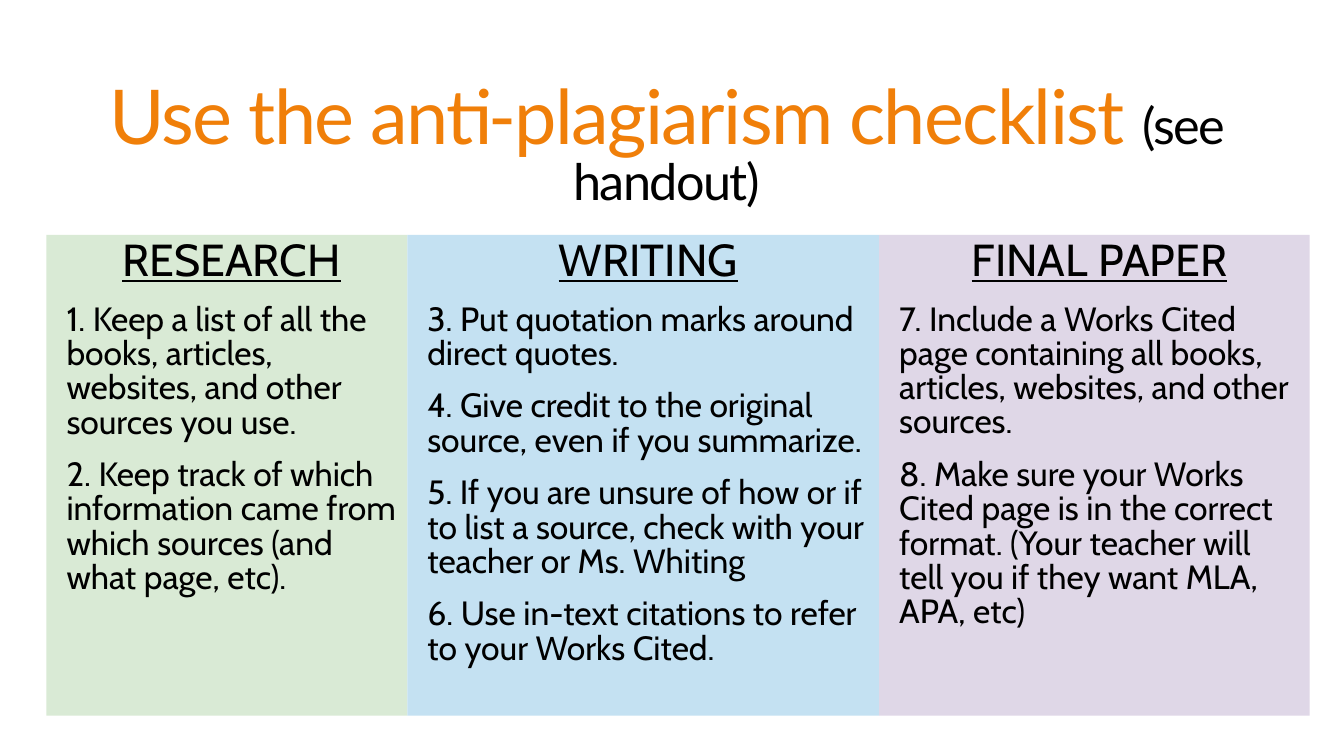
import pptx
import pptx.util
import pptx.dml.color
import pptx.enum.text
import pptx.oxml.ns
from lxml import etree

Inches = pptx.util.Inches
Pt = pptx.util.Pt
Align = pptx.enum.text.PP_ALIGN
Anchor = pptx.enum.text.MSO_ANCHOR

TOP, TALL, LEFT = 2.33, 4.77, 0.46

# width, fill, heading, points
COLS = [
    (3.58, "D9EAD5", "RESEARCH", [
        "1. Keep a list of all the books, articles, websites, and other sources you use.",
        "2. Keep track of which information came from which sources (and what page, etc).",
    ]),
    (4.68, "C4E1F2", "WRITING", [
        "3. Put quotation marks around direct quotes.",
        "4. Give credit to the original source, even if you summarize.",
        "5. If you are unsure of how or if to list a source, check with your teacher or Ms. Whiting",
        "6. Use in-text citations to refer to your Works Cited.",
    ]),
    (4.27, "DFD7E7", "FINAL PAPER", [
        "7. Include a Works Cited page containing all books, articles, websites, and other sources.",
        "8. Make sure your Works Cited page is in the correct format. "
        "(Your teacher will tell you if they want MLA, APA, etc)",
    ]),
]


def color(text):
    return pptx.dml.color.RGBColor.from_string(text)


def place(shape, left, top, width, height):
    shape.left, shape.top = Inches(left), Inches(top)
    shape.width, shape.height = Inches(width), Inches(height)


def style(run, face, size, tint):
    run.font.name = face
    run.font.size = Pt(size)
    run.font.color.rgb = color(tint)


def setup(frame, anchor):
    frame.word_wrap = True
    frame.auto_size = pptx.enum.text.MSO_AUTO_SIZE.NONE
    frame.vertical_anchor = anchor


def indent(para):
    """Inset the whole paragraph and drop its bullet."""
    props = para._p.get_or_add_pPr()
    props.set("marL", str(Inches(0.1)))
    props.set("indent", "0")
    etree.SubElement(props, pptx.oxml.ns.qn("a:buNone"))


def fill_title(shape):
    place(shape, 0.72, 0.55, 11.78, 1.81)
    setup(shape.text_frame, Anchor.MIDDLE)
    para = shape.text_frame.paragraphs[0]
    para.text = "Use the anti-plagiarism checklist "
    para.add_run().text = "(see handout)"
    para.alignment = Align.CENTER
    para.line_spacing = 0.85
    for run, size, tint in zip(para.runs, (54, 36), ("F07F09", "000000")):
        style(run, "Lato", size, tint)
        run.font._element.set("spc", "-120")


def fill_col(shape, tint, head, points):
    shape.fill.solid()
    shape.fill.fore_color.rgb = color(tint)
    frame = shape.text_frame
    setup(frame, Anchor.TOP)
    frame.text = "\n".join([head] + points)
    for i, para in enumerate(frame.paragraphs):
        first = i == 0
        indent(para)
        para.alignment = Align.CENTER if first else Align.LEFT
        para.line_spacing = 0.85
        para.space_before = Pt(0 if first else 13)
        para.space_after = Pt(0)
        run = para.runs[0]
        style(run, "Cabin", 32 if first else 24, "000000")
        run.font.underline = first


def main():
    deck = pptx.Presentation()
    deck.slide_width, deck.slide_height = Inches(13.33), Inches(7.5)
    slide = deck.slides.add_slide(deck.slide_layouts[1])
    fill_title(slide.shapes.title)

    left = LEFT
    for i, (width, tint, head, points) in enumerate(COLS):
        if i == 0:
            shape = slide.placeholders[1]
        else:
            shape = slide.shapes.add_textbox(0, 0, 0, 0)
        place(shape, left, TOP, width, TALL)
        fill_col(shape, tint, head, points)
        left += width
    deck.save("out.pptx")


if __name__ == "__main__":
    main()
